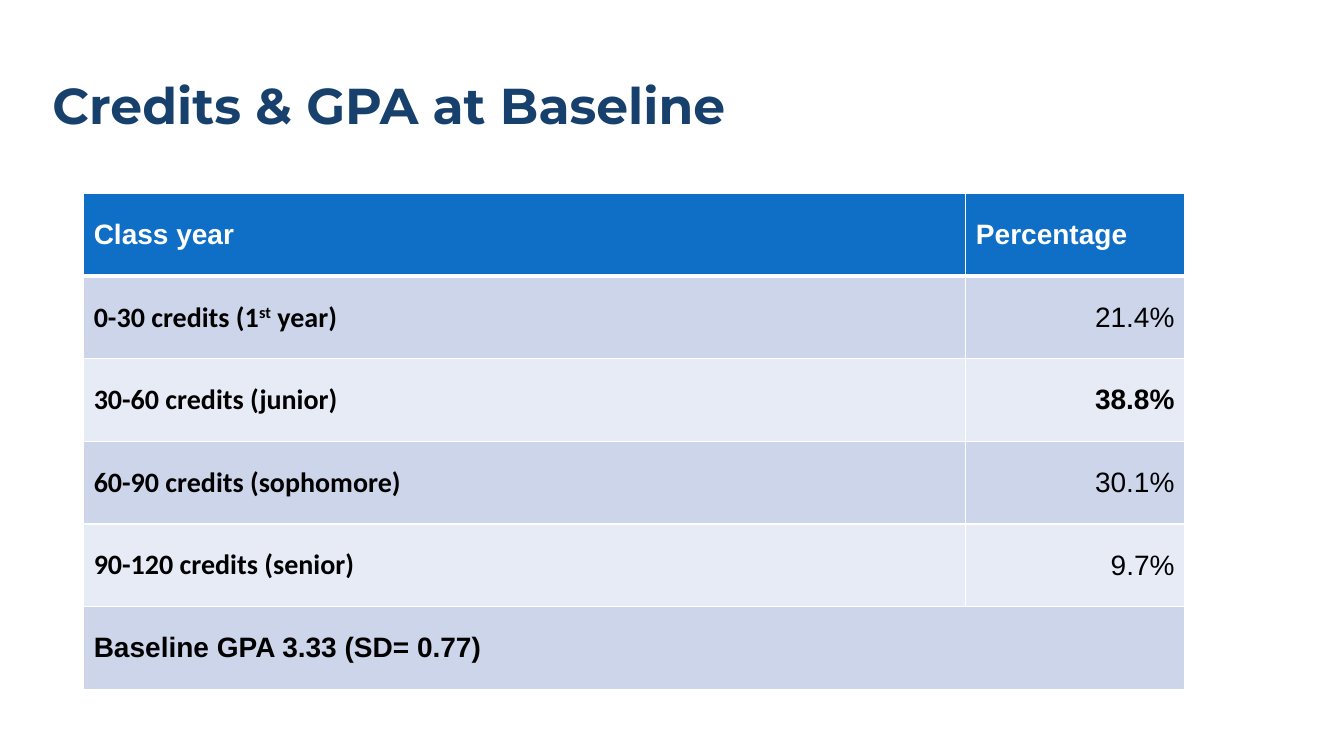
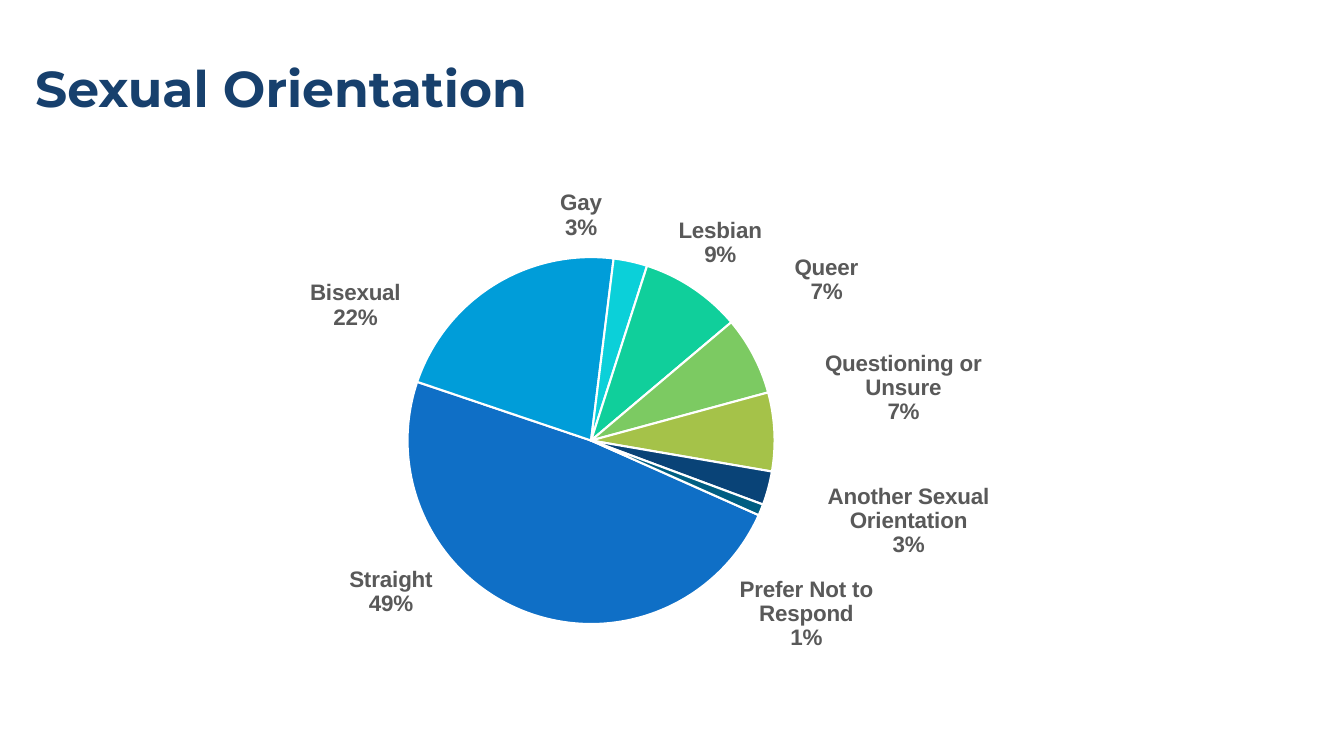
from dataclasses import dataclass

from lxml import etree
from pptx import Presentation
from pptx.chart.data import CategoryChartData as ChartData
from pptx.dml.color import RGBColor as RGB
from pptx.enum.chart import XL_CHART_TYPE as Kind, XL_LABEL_POSITION as Pos
from pptx.enum.text import MSO_ANCHOR as Anchor, PP_ALIGN as Align
from pptx.oxml import parse_xml
from pptx.oxml.ns import nsdecls, qn
from pptx.slide import Slide
from pptx.util import Inches, Pt


@dataclass(frozen=True)
class Theme:
    navy: str = "17406D"
    blue: str = "0F6FC6"
    white: str = "FFFFFF"
    black: str = "000000"
    gray: str = "595959"
    bands: tuple = ("CCD5EA", "E7EBF5")
    head: str = "Montserrat"
    body: str = "Arial"
    alt: str = "Calibri"
    title: int = 36
    cell: int = 20
    label: int = 16


@dataclass(frozen=True)
class Box:
    x: float
    y: float
    w: float
    h: float

    def emu(self) -> tuple:
        return tuple(Inches(n) for n in (self.x, self.y, self.w, self.h))


@dataclass(frozen=True)
class Row:
    name: tuple  # every second part is superscript
    share: str
    bold: bool = False


@dataclass(frozen=True)
class Slice:
    name: str
    value: int
    color: str
    dx: float  # label shift, as a share of the chart size
    dy: float


T = Theme()

ROWS = (
    Row(("0-30 credits (1", "st", " year)"), "21.4%"),
    Row(("30-60 credits (junior)",), "38.8%", True),
    Row(("60-90 credits (sophomore)",), "30.1%"),
    Row(("90-120 credits (senior)",), "9.7%"),
)

SLICES = (
    Slice("Straight", 49, T.blue, -0.1, -0.09),
    Slice("Bisexual", 22, "009DD9", -0.1, 0.09),
    Slice("Gay", 3, "0BD0D9", -0.08, -0.03),
    Slice("Lesbian", 9, "10CF9B", -0.02, -0.03),
    Slice("Queer", 7, "7CCA62", 0.04, -0.09),
    Slice("Questioning or Unsure", 7, "A5C249", 0.05, -0.08),
    Slice("Another Sexual Orientation", 3, "094377", 0.06, -0.01),
    Slice("Prefer Not to Respond", 1, "005E82", -0.03, 0.12),
)


def style(font, face: str, size: int, color: str, bold: bool = True) -> None:
    font.name, font.size, font.bold = face, Pt(size), bold
    font.color.rgb = RGB.from_string(color)


def add_title(slide: Slide, text: str, box: Box) -> None:
    frame = slide.shapes.add_textbox(*box.emu()).text_frame
    frame.word_wrap = True
    frame.vertical_anchor = Anchor.MIDDLE
    par = frame.paragraphs[0]
    par.text = text
    par.line_spacing = 0.9
    style(par.font, T.head, T.title, T.navy)


# Table
def set_cell(cell, parts: tuple, fill: str, face: str = T.body,
             color: str = T.black, bold: bool = True,
             align: Align = Align.LEFT, base: int = 1) -> None:
    cell.vertical_anchor = Anchor.MIDDLE
    par = cell.text_frame.paragraphs[0]
    par.alignment = align
    for i, part in enumerate(parts):
        run = par.add_run()
        run.text = part
        if i % 2:
            run.font._element.set("baseline", "30000")
    style(par.font, face, T.cell, color, bold)
    for side in "LRTB":
        width = Pt(base if side == "B" else 1)
        cell._tc.get_or_add_tcPr().append(parse_xml(
            f'<a:ln{side} {nsdecls("a")} w="{width}"><a:solidFill>'
            f'<a:srgbClr val="{T.white}"/></a:solidFill></a:ln{side}>'))
    cell.fill.solid()
    cell.fill.fore_color.rgb = RGB.from_string(fill)


def add_grid(slide: Slide, box: Box) -> None:
    count = len(ROWS) + 2
    grid = slide.shapes.add_table(count, 2, *box.emu()).table
    for col, width in zip(grid.columns, (8.75, 2.17)):
        col.width = Inches(width)
    for i, name in enumerate(("Class year", "Percentage")):
        set_cell(grid.cell(0, i), (name,), T.blue, color=T.white, base=3)
    for i, row in enumerate(ROWS):
        fill = T.bands[i % 2]
        set_cell(grid.cell(i + 1, 0), row.name, fill, T.alt)
        set_cell(grid.cell(i + 1, 1), (row.share,), fill,
                 bold=row.bold, align=Align.RIGHT)
    last = grid.cell(count - 1, 0)
    last.merge(grid.cell(count - 1, 1))
    set_cell(last, ("Baseline GPA 3.33 (SD= 0.77)",), T.bands[0])


# Pie chart
def layout(x: float, y: float, size: str = "", mode: str = ""):
    return parse_xml(
        f'<c:layout {nsdecls("c")}><c:manualLayout>{mode}<c:x val="{x}"/>'
        f'<c:y val="{y}"/>{size}</c:manualLayout></c:layout>')


def show_parts(node) -> None:
    """Show category and percent on two lines."""
    for tag, val in (("Val", 0), ("CatName", 1), ("Percent", 1)):
        node.find(qn(f"c:show{tag}")).set("val", str(val))
    gap = etree.Element(qn("c:separator"))
    gap.text = "\n"
    node.find(qn("c:showBubbleSize")).addnext(gap)


def add_pie(slide: Slide, box: Box) -> None:
    data = ChartData()
    data.categories = [s.name for s in SLICES]
    data.add_series("Series 1", [s.value for s in SLICES])
    chart = slide.shapes.add_chart(Kind.PIE, *box.emu(), data).chart
    chart.has_title = chart.has_legend = False
    style(chart.font, T.body, 10, T.black, False)
    plot = chart.plots[0]
    plot.vary_by_categories = False
    pie = plot._element
    turn = pie.find(qn("c:firstSliceAng"))
    if turn is None:
        turn = etree.SubElement(pie, qn("c:firstSliceAng"))
    turn.set("val", "114")

    # Plot area
    area = pie.getparent()
    old = area.find(qn("c:layout"))
    if old is not None:
        area.remove(old)
    mode = ('<c:layoutTarget val="inner"/><c:xMode val="edge"/>'
            '<c:yMode val="edge"/>')
    area.insert(0, layout(0.23, 0.21, '<c:w val="0.41"/><c:h val="0.68"/>',
                          mode))

    # Slices and labels
    series = plot.series[0]
    labels = series.data_labels
    labels.position = Pos.OUTSIDE_END
    style(labels.font, T.body, T.label, T.gray)
    for i, part in enumerate(SLICES):
        point = series.points[i]
        point.format.fill.solid()
        point.format.fill.fore_color.rgb = RGB.from_string(part.color)
        point.format.line.color.rgb = RGB.from_string(T.white)
        point.format.line.width = Pt(1.5)
        point.data_label.position = Pos.OUTSIDE_END
        style(point.data_label.font, T.body, T.label, T.gray)
    group = labels._element
    for node, part in zip(group.findall(qn("c:dLbl")), SLICES):
        node.find(qn("c:idx")).addnext(layout(part.dx, part.dy))
        show_parts(node)
    show_parts(group)
    lead = group.find(qn("c:showLeaderLines"))
    if lead is not None:
        lead.set("val", "0")


def main() -> None:
    deck = Presentation()
    deck.slide_width, deck.slide_height = Inches(13.33), Inches(7.5)
    blank = deck.slide_layouts[6]

    # Credits
    slide = deck.slides.add_slide(blank)
    add_title(slide, "Credits & GPA at Baseline", Box(0.42, 0.5, 8.88, 1.14))
    add_grid(slide, Box(0.83, 1.92, 10.92, 4.92))

    # Orientation
    slide = deck.slides.add_slide(blank)
    add_title(slide, "Sexual Orientation", Box(0.25, 0.46, 12.17, 0.9))
    add_pie(slide, Box(2, 1.39, 8.88, 5.42))

    deck.save("out.pptx")


if __name__ == "__main__":
    main()
